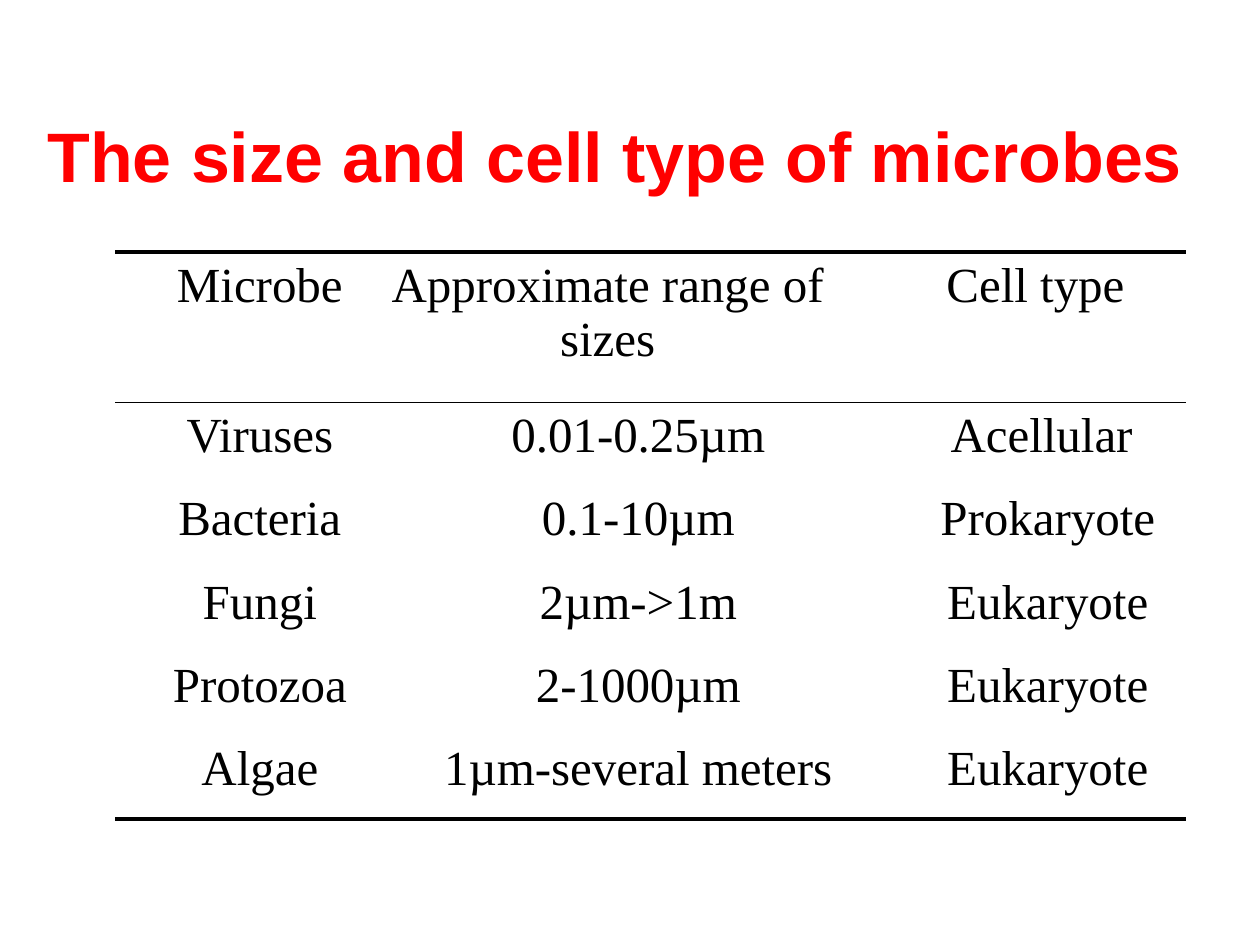
from lxml.etree import SubElement
from pptx import Presentation
from pptx.dml.color import RGBColor
from pptx.enum.text import MSO_AUTO_SIZE, PP_ALIGN
from pptx.oxml.ns import qn
from pptx.util import Pt

COLORS = {"title": "FF0000", "text": "000000", "rule": "000000"}
THICK, THIN = 2.25, 1
CELL_MARGIN = 7.2
COL_WIDTHS = [144, 274.5, 193.5]
HEADER_HEIGHT = 86

HEADER = ["Microbe", "Approximate range of sizes", "Cell type"]
MICROBES = [
    ["Viruses", "0.01-0.25µm", "Acellular"],
    ["Bacteria", "0.1-10µm", "Prokaryote"],
    ["Fungi", "2µm->1m", "Eukaryote"],
    ["Protozoa", "2-1000µm", "Eukaryote"],
    ["Algae", "1µm-several meters", "Eukaryote"],
]
HEADER_INDENTS = [21, 0, 21]
BODY_INDENTS = [21, 35, 35]
ACELLULAR_INDENT = 28


def style_run(r, font, size, color, bold=False):
    r.font.name = font
    r.font.size = Pt(size)
    r.font.bold = bold
    r.font.color.rgb = RGBColor.from_string(COLORS[color])


def set_borders(cell, top, bottom):
    """Draw the top and bottom rules of the given widths; 0 means no line."""
    tcPr = cell._tc.get_or_add_tcPr()
    for side, width in (("L", 0), ("R", 0), ("T", top), ("B", bottom)):
        ln = SubElement(tcPr, qn(f"a:ln{side}"), w=str(int(Pt(width))))
        if width:
            fill = SubElement(ln, qn("a:solidFill"))
            SubElement(fill, qn("a:srgbClr"), val=COLORS["rule"])
        else:
            SubElement(ln, qn("a:noFill"))


def fill_cell(cell, text, indent, top, bottom):
    set_borders(cell, top, bottom)
    cell.fill.background()
    cell.margin_left = Pt(CELL_MARGIN + indent)
    cell.text_frame.text = text
    p = cell.text_frame.paragraphs[0]
    p.alignment = PP_ALIGN.CENTER
    style_run(p.runs[0], "Times New Roman", 28, "text")


def add_title(s, x, y, w, h):
    tf = s.shapes.add_textbox(Pt(x), Pt(y), Pt(w), Pt(h)).text_frame
    tf.word_wrap = False
    tf.auto_size = MSO_AUTO_SIZE.SHAPE_TO_FIT_TEXT
    tf.text = "The size and cell type of microbes"
    style_run(tf.paragraphs[0].runs[0], "Arial", 40, "title", bold=True)


def add_microbe_table(s, x, y, w, h):
    rows = [HEADER] + MICROBES
    last = len(rows) - 1
    table = s.shapes.add_table(len(rows), len(HEADER), Pt(x), Pt(y), Pt(w), Pt(h)).table
    table.first_row = table.horz_banding = False
    for column, width in zip(table.columns, COL_WIDTHS):
        column.width = Pt(w * width / sum(COL_WIDTHS))
    rules = [THICK, THIN] + [0] * (last - 1) + [THICK]
    for i, texts in enumerate(rows):
        table.rows[i].height = Pt(HEADER_HEIGHT if i == 0 else (h - HEADER_HEIGHT) / last)
        indents = BODY_INDENTS if i else HEADER_INDENTS
        for j, (text, indent) in enumerate(zip(texts, indents)):
            if text == "Acellular":
                indent = ACELLULAR_INDENT
            fill_cell(table.cell(i, j), text, indent, rules[i], rules[i + 1])


def main():
    prs = Presentation()
    prs.slide_width, prs.slide_height = Pt(720), Pt(540)
    s = prs.slides.add_slide(prs.slide_layouts[6])
    add_microbe_table(s, 66, 144, 612, 324)
    add_title(s, 20, 60.5, 670, 55.5)
    prs.save("out.pptx")


if __name__ == "__main__":
    main()
